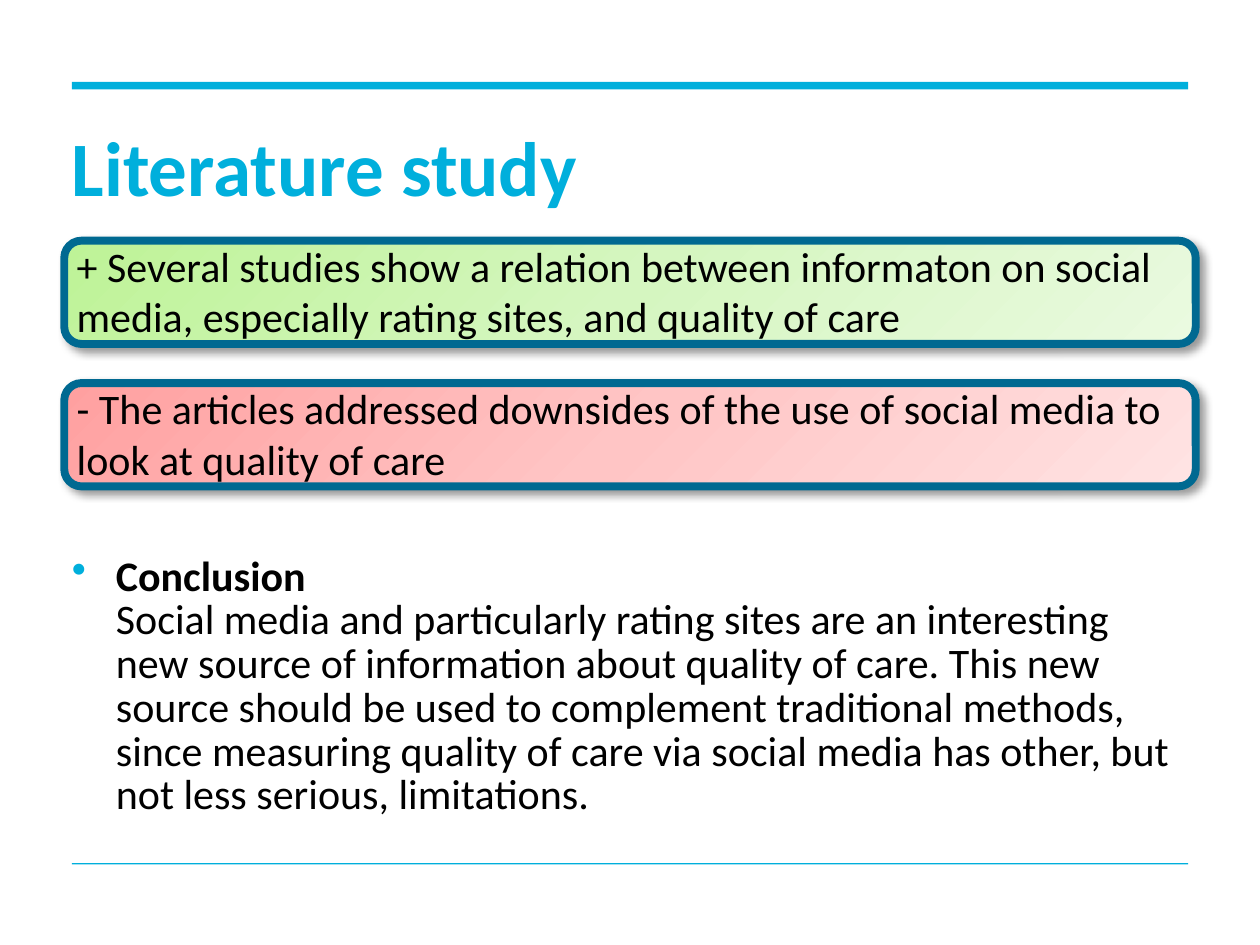
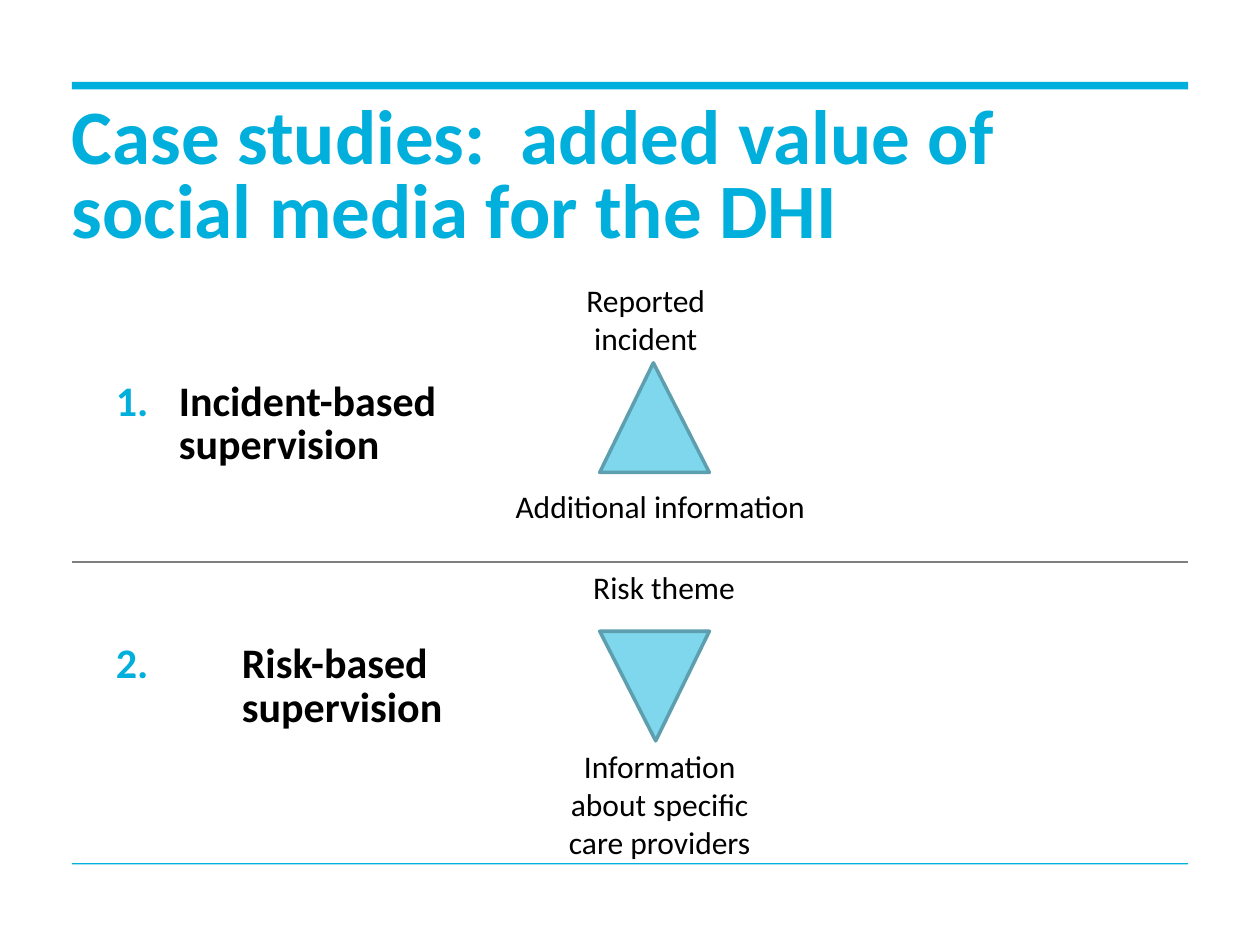
from lxml import etree
from pptx import Presentation
from pptx.dml.color import RGBColor
from pptx.enum.shapes import MSO_CONNECTOR, MSO_SHAPE
from pptx.enum.text import MSO_ANCHOR, PP_ALIGN
from pptx.oxml.ns import qn
from pptx.util import Emu, Inches, Pt

RECT, ROUND = MSO_SHAPE.RECTANGLE, MSO_SHAPE.ROUNDED_RECTANGLE
CONE, LINE = MSO_SHAPE.ISOSCELES_TRIANGLE, MSO_CONNECTOR.STRAIGHT
LEFT, MID = PP_ALIGN.LEFT, PP_ALIGN.CENTER
TOP, CENTER = MSO_ANCHOR.TOP, MSO_ANCHOR.MIDDLE

FONT = "Calibri"
HUES = {"main": "00AFDC", "ink": "000000", "edge": "006991",
        "cone": "7FD7ED", "rim": "5E9FAF", "rule": "7F7F7F"}
GREEN = ("BEF397", "D5F6C0", "EAFAE0")
RED = ("FFA0A0", "FFC5C5", "FFE3E3")

# Shared grid, in inches
WIDE, HIGH = 10, 7.5
EDGE, SPAN = 0.57, 8.86
TAB = 0.35                 # hanging indent of the body
BODY, ROW = 1.98, 25 / 72  # top of the body and height of a body line


def rgb(name):
    return RGBColor.from_string(HUES[name])


def row(n):
    return BODY + n * ROW


def node(home, tag, **attrs):
    return etree.SubElement(home, qn(tag), {k: str(v) for k, v in attrs.items()})


# Text
def frame(slide, x, y, w, h, pad=True, anchor=TOP):
    text = slide.shapes.add_textbox(*map(Inches, (x, y, w, h))).text_frame
    text.word_wrap = True
    text.vertical_anchor = anchor
    if not pad:
        text.margin_left = text.margin_right = 0
        text.margin_top = text.margin_bottom = 0
    return text


def run(para, words, size, hue="ink", bold=False):
    part = para.add_run()
    part.text = words
    font = part.font
    font.name, font.size, font.bold = FONT, Pt(size), bold
    font.color.rgb = rgb(hue)


def indent(para, left, hang=0.0):
    props = para._p.get_or_add_pPr()
    props.set("marL", str(Inches(left)))
    props.set("indent", str(-Inches(hang)))
    return props


def title(slide, words, y, h):
    para = frame(slide, EDGE, y, SPAN, h, False, CENTER).paragraphs[0]
    para.line_spacing = Pt(42)
    run(para, words, 44, "main", True)


def label(slide, x, y, w, lines, size=18, align=MID):
    text = frame(slide, x, y, w, 0.1 + 0.3 * len(lines))
    for i, words in enumerate(lines):
        para = text.add_paragraph() if i else text.paragraphs[0]
        para.alignment = align
        run(para, words, size)


def point(slide, y, head, words):
    text = frame(slide, EDGE, y, SPAN, 6 * ROW, False)
    first, rest = text.paragraphs[0], text.add_paragraph()
    props = indent(first, TAB, TAB)
    node(node(props, "a:buClr"), "a:srgbClr", val=HUES["main"])
    node(props, "a:buChar", char="•")
    indent(rest, TAB)
    first.line_spacing = rest.line_spacing = Pt(25)
    run(first, head, 24, bold=True)
    run(rest, words, 24)


def item(slide, y, mark, gap, lines):
    para = frame(slide, EDGE + TAB, y, 3.2, 2 * ROW, False).paragraphs[0]
    indent(para, gap, gap)
    para.line_spacing = Pt(25)
    run(para, mark + "\t", 24, "main", True)
    for i, words in enumerate(lines):
        if i:
            para.add_line_break()
        run(para, words, 24, bold=True)


# Shapes
def shape(slide, kind, x, y, w, h):
    form = slide.shapes.add_shape(kind, *map(Inches, (x, y, w, h)))
    form.shadow.inherit = False
    return form


def band(slide, y, h):
    form = shape(slide, RECT, EDGE, y, SPAN, h)
    form.fill.solid()
    form.fill.fore_color.rgb = rgb("main")
    form.line.fill.background()


def panel(slide, y, hues, words):
    form = shape(slide, ROUND, 0.51, y, 8.98, 0.82)
    props = form._element.spPr
    # Diagonal three-stop fill, placed just after the outline
    grad = node(props, "a:gradFill", rotWithShape=1)
    stops = node(grad, "a:gsLst")
    for i, hue in enumerate(hues):
        node(node(stops, "a:gs", pos=i * 50000), "a:srgbClr", val=hue)
    node(grad, "a:lin", ang=45 * 60000, scaled=0)
    props.find(qn("a:prstGeom")).addnext(grad)
    form.line.color.rgb = rgb("edge")
    form.line.width = Pt(4.5)
    # Soft shadow to the lower right
    cast = node(props.find(qn("a:effectLst")), "a:outerShdw", blurRad=Pt(5),
                dist=Pt(3), dir=45 * 60000, algn="tl", rotWithShape=0)
    node(node(cast, "a:srgbClr", val=HUES["ink"]), "a:alpha", val=40000)
    label(slide, 0.51, y - 0.05, 8.98, [words], 24, LEFT)


def cone(slide, y, turn=0):
    form = shape(slide, CONE, 4.76, y, 0.87, 0.87)
    form.adjustments[0] = 0.49
    form.rotation = turn
    form.fill.solid()
    form.fill.fore_color.rgb = rgb("cone")
    form.line.color.rgb = rgb("rim")
    form.line.width = Pt(2)


def rule(slide, y):
    ends = map(Inches, (EDGE, y, EDGE + SPAN, y))
    line = slide.shapes.add_connector(LINE, *ends)
    line.line.color.rgb = rgb("rule")
    line.line.width = Pt(0.75)
    node(line._element.spPr, "a:effectLst")


# Slides
def start(deck):
    slide = deck.slides.add_slide(deck.slide_layouts[6])
    band(slide, 0.65, 0.06)
    band(slide, 6.85, 0.01)
    return slide


def study(deck):
    slide = start(deck)
    title(slide, "Literature study", 1.1, 0.58)
    panel(slide, 1.91, GREEN,
          "+ Several studies show a relation between informaton on social "
          "media, especially rating sites, and quality of care")
    panel(slide, 3.04, RED,
          "- The articles addressed downsides of the use of social media to "
          "look at quality of care")
    point(slide, row(7), "Conclusion",
          "Social media and particularly rating sites are an interesting new "
          "source of information about quality of care. This new source "
          "should be used to complement traditional methods, since measuring "
          "quality of care via social media has other, but not less serious, "
          "limitations.")


def cases(deck):
    slide = start(deck)
    title(slide, "Case studies:  added value of social media for the DHI",
          0.84, 1.18)
    # Incident-based half
    item(slide, row(3), "1.", 0.5, ["Incident-based", "supervision"])
    label(slide, 4.02, 2.18, 2.21, ["Reported", "incident"])
    cone(slide, 2.88)
    label(slide, 3.98, 3.82, 2.52, ["Additional information"])
    rule(slide, 4.46)
    # Risk-based half
    item(slide, row(9), "2.", 1, ["Risk-based", "supervision"])
    label(slide, 4.61, 4.46, 1.34, ["Risk theme"], align=LEFT)
    cone(slide, 5.01, 180)
    label(slide, 4.29, 5.88, 1.89, ["Information about specific care providers"])


def main():
    deck = Presentation()
    deck.slide_width, deck.slide_height = Emu(Inches(WIDE)), Emu(Inches(HIGH))
    study(deck)
    cases(deck)
    deck.save("out.pptx")


if __name__ == "__main__":
    main()
